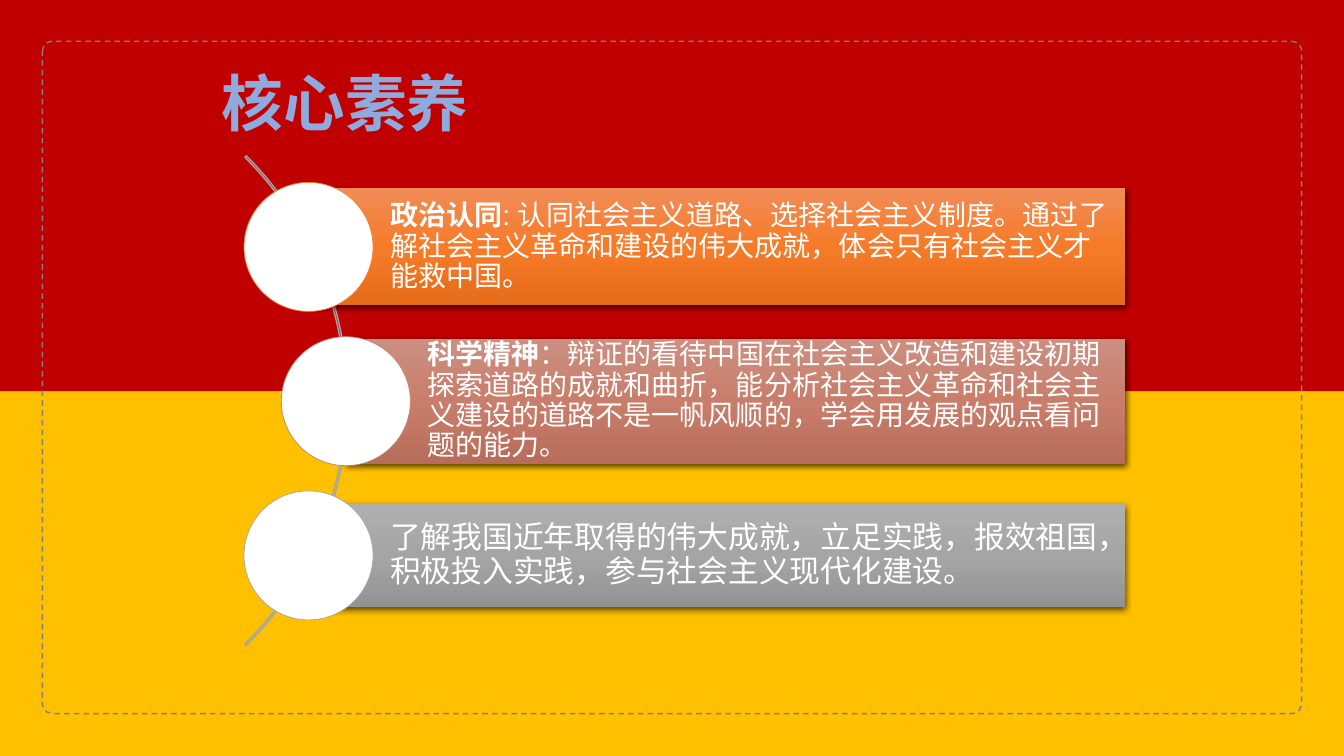
from copy import deepcopy

from pptx import Presentation
from pptx.dml.color import RGBColor as RGB
from pptx.enum.dml import MSO_LINE
from pptx.enum.shapes import MSO_SHAPE as Kind
from pptx.enum.text import MSO_ANCHOR as Anchor, MSO_AUTO_SIZE as Auto, PP_ALIGN as Align
from pptx.oxml import parse_xml
from pptx.oxml.ns import nsdecls, qn
from pptx.util import Inches, Pt

RED = RGB(0xC0, 0x00, 0x00)
GOLD = RGB(0xFF, 0xC0, 0x00)
WHITE = RGB(0xFF, 0xFF, 0xFF)
BLUE = RGB(0x8F, 0xAA, 0xDC)
GRAY = RGB(0x80, 0x80, 0x80)
SILVER = RGB(0xA5, 0xA5, 0xA5)
ORANGE = RGB(0xED, 0x7D, 0x31)
ROSE = RGB(0xC4, 0x81, 0x70)
ORANGES = [RGB(0xF1, 0x8C, 0x57), RGB(0xF6, 0x7B, 0x28), RGB(0xE5, 0x6C, 0x19)]
ROSES = [RGB(0xCB, 0x8F, 0x81), RGB(0xC9, 0x7E, 0x6B), RGB(0xB7, 0x6D, 0x5B)]
GRAYS = [RGB(0xAF, 0xAF, 0xAF), SILVER, RGB(0x93, 0x93, 0x93)]

LATIN = "Arial"
HAN = "Noto Sans CJK JP"
RIGHT = 11.16  # shared right edge of the bars
DISC = 1.28    # disc diameter

# Disc center x and y, bar height, bar colors, disc line, text size, heading, body
ITEMS = [
    (3.06, 2.45, 1.16, ORANGES, ORANGE, 20, "政治认同",
     ": 认同社会主义道路、选择社会主义制度。通过了解社会主义革命和建设的伟大成就，"
     "体会只有社会主义才能救中国。"),
    (3.43, 3.98, 1.24, ROSES, ROSE, 20, "科学精神",
     "：辩证的看待中国在社会主义改造和建设初期探索道路的成就和曲折，"
     "能分析社会主义革命和社会主义建设的道路不是一帆风顺的，学会用发展的观点看问题的能力。"),
    (3.06, 5.51, 1.02, GRAYS, SILVER, 22, "",
     "了解我国近年取得的伟大成就，立足实践，报效祖国，积极投入实践，"
     "参与社会主义现代化建设。"),
]


def add_shape(slide, kind, box, fill=None, line=None, width=1):
    shape = slide.shapes.add_shape(kind, *map(Inches, box))
    shape.shadow.inherit = False
    if fill is None:
        shape.fill.background()
    else:
        shape.fill.solid()
        shape.fill.fore_color.rgb = fill
    if line is None:
        shape.line.fill.background()
    else:
        shape.line.color.rgb = line
        shape.line.width = Pt(width)
    return shape


def style_run(run, size, color, bold, latin=LATIN):
    font = run.font
    font.size, font.bold, font.name = Pt(size), bold, latin
    font.color.rgb = color
    east = parse_xml(f'<a:ea {nsdecls("a")} typeface="{HAN}"/>')
    font._element.find(qn("a:latin")).addnext(east)


def shade(shape, colors):
    """Fill from top to bottom with three evenly spaced colors."""
    shape.fill.gradient()
    shape.fill.gradient_angle = 270
    stops = shape._element.spPr.find(qn("a:gradFill")).find(qn("a:gsLst"))
    stops.append(deepcopy(stops[-1]))
    for i, (stop, color) in enumerate(zip(shape.fill.gradient_stops, colors)):
        stop.position = i / 2
        stop.color.rgb = color


def cast_shadow(shape):
    effects = shape._element.spPr.find(qn("a:effectLst"))
    effects.append(parse_xml(
        f'<a:outerShdw {nsdecls("a")} blurRad="{Pt(4.5)}" dist="{Pt(1.5)}" '
        'dir="5400000" algn="ctr" rotWithShape="0">'
        '<a:srgbClr val="000000"><a:alpha val="63000"/></a:srgbClr></a:outerShdw>'))


def add_bar(slide, box, colors, size, head, body):
    bar = add_shape(slide, Kind.RECTANGLE, box)
    shade(bar, colors)
    cast_shadow(bar)
    frame = bar.text_frame
    frame.word_wrap = True
    frame.vertical_anchor = Anchor.MIDDLE
    frame.margin_left = Inches(0.81)
    frame.margin_top = frame.margin_right = frame.margin_bottom = Inches(0.06)
    para = frame.paragraphs[0]
    para.alignment = Align.LEFT
    para.line_spacing = 0.9
    for text, bold in ((head, True), (body, False)):
        if text:
            run = para.add_run()
            run.text = text
            style_run(run, size, WHITE, bold)


def add_item(slide, x, y, height, colors, line, size, head, body):
    add_bar(slide, (x, y - height / 2, RIGHT - x, height), colors, size, head, body)
    add_shape(slide, Kind.OVAL, (x - DISC / 2, y - DISC / 2, DISC, DISC), WHITE, line, 0.5)


def add_title(slide, text):
    box = slide.shapes.add_textbox(*map(Inches, (2.09, 0.59, 2.67, 0.84)))
    frame = box.text_frame
    frame.text = text
    frame.word_wrap = False
    frame.auto_size = Auto.SHAPE_TO_FIT_TEXT
    para = frame.paragraphs[0]
    para.alignment = Align.CENTER
    style_run(para.runs[0], 44, BLUE, True, HAN)


def add_back(slide):
    add_shape(slide, Kind.RECTANGLE, (0, 3.28, 13.33, 4.22), GOLD)
    add_shape(slide, Kind.RECTANGLE, (0, 0, 13.33, 3.88), RED)
    border = add_shape(slide, Kind.ROUNDED_RECTANGLE, (0.42, 0.41, 12.49, 6.67), line=GRAY)
    border.adjustments[0] = 0.015
    border.line.dash_style = MSO_LINE.DASH


def add_arc(slide):
    arc = add_shape(slide, Kind.BLOCK_ARC, (-3.42, 0.54, 6.87, 6.87), line=SILVER)
    for i, value in enumerate((189, 27, 0.003)):
        arc.adjustments[i] = value


def main():
    deck = Presentation()
    deck.slide_width, deck.slide_height = Inches(13.33), Inches(7.5)
    slide = deck.slides.add_slide(deck.slide_layouts[6])

    # Background and title
    add_back(slide)
    add_title(slide, "核心素养")

    # Curved list
    add_arc(slide)
    for item in ITEMS:
        add_item(slide, *item)

    deck.save("out.pptx")


if __name__ == "__main__":
    main()
